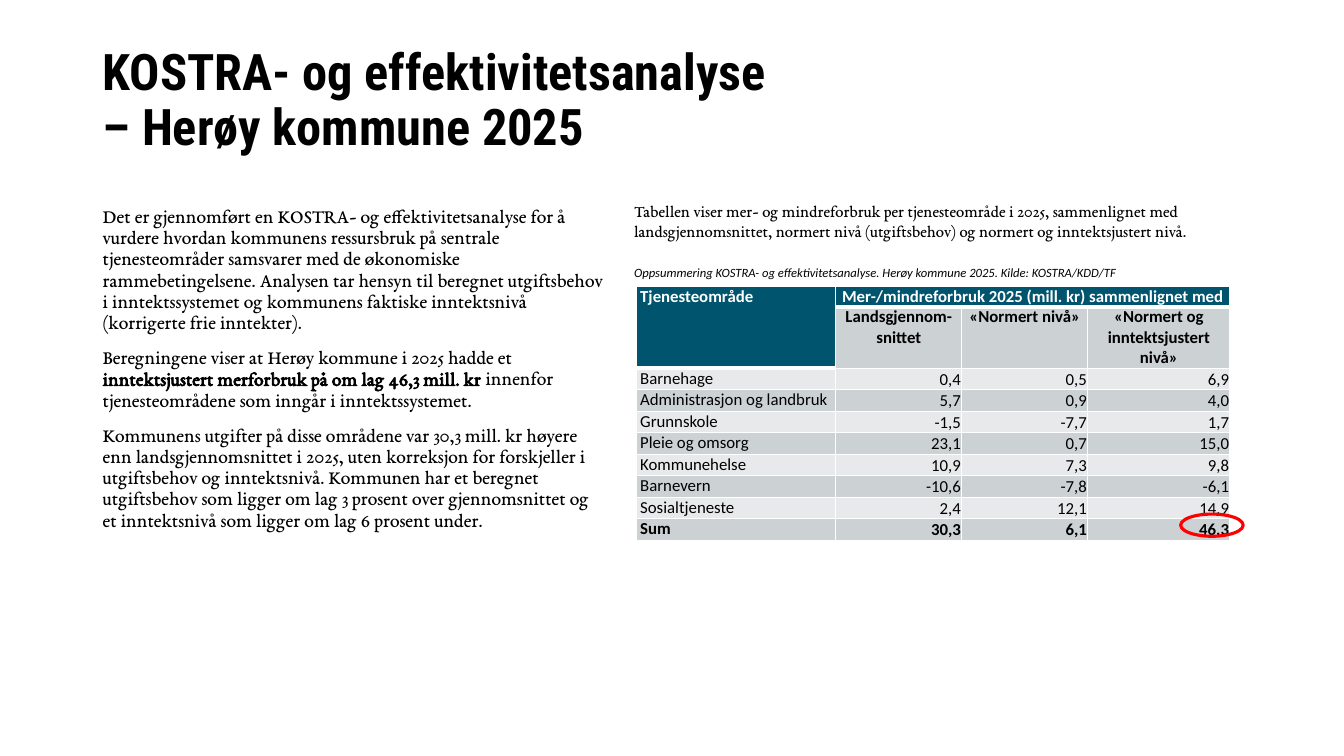
from copy import deepcopy
from lxml.etree import SubElement
from pptx import Presentation
from pptx.dml.color import RGBColor
from pptx.enum.shapes import MSO_SHAPE
from pptx.enum.text import MSO_ANCHOR, MSO_AUTO_SIZE, PP_ALIGN
from pptx.oxml.ns import qn
from pptx.util import Inches, Pt

BLACK = RGBColor(0x00, 0x00, 0x00)
WHITE = RGBColor(0xFF, 0xFF, 0xFF)
TEAL = RGBColor(0x00, 0x54, 0x6D)
GREY = RGBColor(0xCC, 0xD1, 0xD4)
PALE = RGBColor(0xE7, 0xE9, 0xEB)
RED = RGBColor(0xFF, 0x00, 0x00)
SERIF, SANS, HEADING = "EB Garamond", "Calibri", "Roboto Condensed"
LEFT = Inches(0.92)
RIGHT = Inches(6.19)


def write(para, text, font=SANS, size=12, color=BLACK, bold=False, italic=False,
          align=PP_ALIGN.LEFT):
    para.alignment = align
    span = para.add_run()
    span.text = text
    span.font.name = font
    span.font.size = Pt(size)
    span.font.color.rgb = color
    span.font.bold = bold
    span.font.italic = italic
    return span


def add_box(page, left, top, width, height, fit=MSO_AUTO_SIZE.SHAPE_TO_FIT_TEXT):
    frame = page.shapes.add_textbox(left, top, width, height).text_frame
    frame.word_wrap = True
    frame.auto_size = fit
    return frame


deck = Presentation()
deck.slide_width = Inches(13.33)
deck.slide_height = Inches(7.5)
page = deck.slides.add_slide(deck.slide_layouts[5])

title = page.shapes.title
title.left, title.top, title.width, title.height = LEFT, Inches(0.15), Inches(11.5), Inches(1.45)
title.text_frame.auto_size = MSO_AUTO_SIZE.NONE
title.text_frame.vertical_anchor = MSO_ANCHOR.BOTTOM
para = title.text_frame.paragraphs[0]
para.line_spacing = 0.9
span = write(para, "KOSTRA- og effektivitetsanalyse", HEADING, 36, bold=True)
para.add_line_break()
para._p.find(qn("a:br")).append(deepcopy(span.font._element))
write(para, "– Herøy kommune 2025", HEADING, 36, bold=True)

body = [
    [("Det er gjennomført en KOSTRA- og effektivitetsanalyse for å vurdere hvordan kommunens "
      "ressursbruk på sentrale tjenesteområder samsvarer med de økonomiske "
      "rammebetingelsene. Analysen tar hensyn til beregnet utgiftsbehov i inntektssystemet "
      "og kommunens faktiske inntektsnivå (korrigerte frie inntekter).", False)],
    [("Beregningene viser at Herøy kommune i 2025 hadde et ", False),
     ("inntektsjustert merforbruk på om lag 46,3 mill. kr ", True),
     ("innenfor tjenesteområdene som inngår i inntektssystemet.", False)],
    [("Kommunens utgifter på disse områdene var 30,3 mill. kr høyere enn "
      "landsgjennomsnittet i 2025, uten korreksjon for forskjeller i utgiftsbehov og "
      "inntektsnivå. Kommunen har et beregnet utgiftsbehov som ligger om lag 3 prosent over "
      "gjennomsnittet og et inntektsnivå som ligger om lag 6 prosent under.", False)],
]
frame = add_box(page, LEFT, Inches(2), Inches(5.18), Inches(4.95), MSO_AUTO_SIZE.NONE)
for index, spans in enumerate(body):
    para = frame.add_paragraph() if index else frame.paragraphs[0]
    para.line_spacing = 0.9
    if index:
        para.space_before = Pt(10)
    for text, bold in spans:
        write(para, text, SERIF, 14, bold=bold)

rows = [
    ["Tjenesteområde", "Mer-/mindreforbruk 2025 (mill. kr) sammenlignet med", "", ""],
    ["", "Landsgjennom-snittet", "«Normert nivå»", "«Normert og inntektsjustert nivå»"],
    ["Barnehage", "0,4", "0,5", "6,9"],
    ["Administrasjon og landbruk", "5,7", "0,9", "4,0"],
    ["Grunnskole", "-1,5", "-7,7", "1,7"],
    ["Pleie og omsorg", "23,1", "0,7", "15,0"],
    ["Kommunehelse", "10,9", "7,3", "9,8"],
    ["Barnevern", "-10,6", "-7,8", "-6,1"],
    ["Sosialtjeneste", "2,4", "12,1", "14,9"],
    ["Sum", "30,3", "6,1", "46,3"],
]
table = page.shapes.add_table(len(rows), 4, Inches(6.31), Inches(2.84),
                              Inches(5.89), Inches(2.48)).table
table.first_row = table.horz_banding = False
for column, width in zip(table.columns, (1.98, 1.25, 1.25, 1.41)):
    column.width = Inches(width)

for r, values in enumerate(rows):
    table.rows[r].height = Inches({0: 0.2, 1: 0.6}.get(r, 0.21))
    for c, text in enumerate(values):
        cell = table.cell(r, c)
        dark = r == 0 or (r == 1 and c == 0)
        number = r > 1 and c > 0
        cell.margin_left = cell.margin_right = Inches(0.01 if number else 0.04)
        cell.margin_top = Inches(0.01 if number else 0)
        cell.margin_bottom = 0
        cell.vertical_anchor = MSO_ANCHOR.BOTTOM if number else MSO_ANCHOR.TOP
        for side in "LRTB":
            points = 3 if dark and side == "B" else 1
            line = SubElement(cell._tc.tcPr, qn(f"a:ln{side}"), w=str(Pt(points)))
            SubElement(SubElement(line, qn("a:solidFill")), qn("a:srgbClr"), val=str(WHITE))
        cell.fill.solid()
        cell.fill.fore_color.rgb = TEAL if dark else GREY if r % 2 else PALE
        if text:
            align = PP_ALIGN.RIGHT if number else PP_ALIGN.CENTER if c else PP_ALIGN.LEFT
            write(cell.text_frame.paragraphs[0], text, color=WHITE if dark else BLACK,
                  bold=r < 2 or text == "Sum" or values[0] == "Sum", align=align)
table.cell(0, 0).merge(table.cell(1, 0))
table.cell(0, 1).merge(table.cell(0, 3))

ring = page.shapes.add_shape(MSO_SHAPE.OVAL, Inches(11.71), Inches(5.1), Inches(0.62), Inches(0.22))
ring.shadow.inherit = False
ring.fill.background()
ring.line.color.rgb = RED
ring.line.width = Pt(2.25)

caption = add_box(page, RIGHT, Inches(2.56), Inches(5.59), Inches(0.26)).paragraphs[0]
caption.line_spacing = 1.15
write(caption, "Oppsummering KOSTRA- og effektivitetsanalyse. Herøy kommune 2025. "
      "Kilde: KOSTRA/KDD/TF", size=9, italic=True)

intro = add_box(page, RIGHT, Inches(1.94), Inches(6.67), Inches(0.5)).paragraphs[0]
write(intro, "Tabellen viser mer- og mindreforbruk per tjenesteområde i 2025, sammenlignet med "
      "landsgjennomsnittet, normert nivå (utgiftsbehov) og normert og inntektsjustert nivå.", SERIF)

deck.save("out.pptx")
